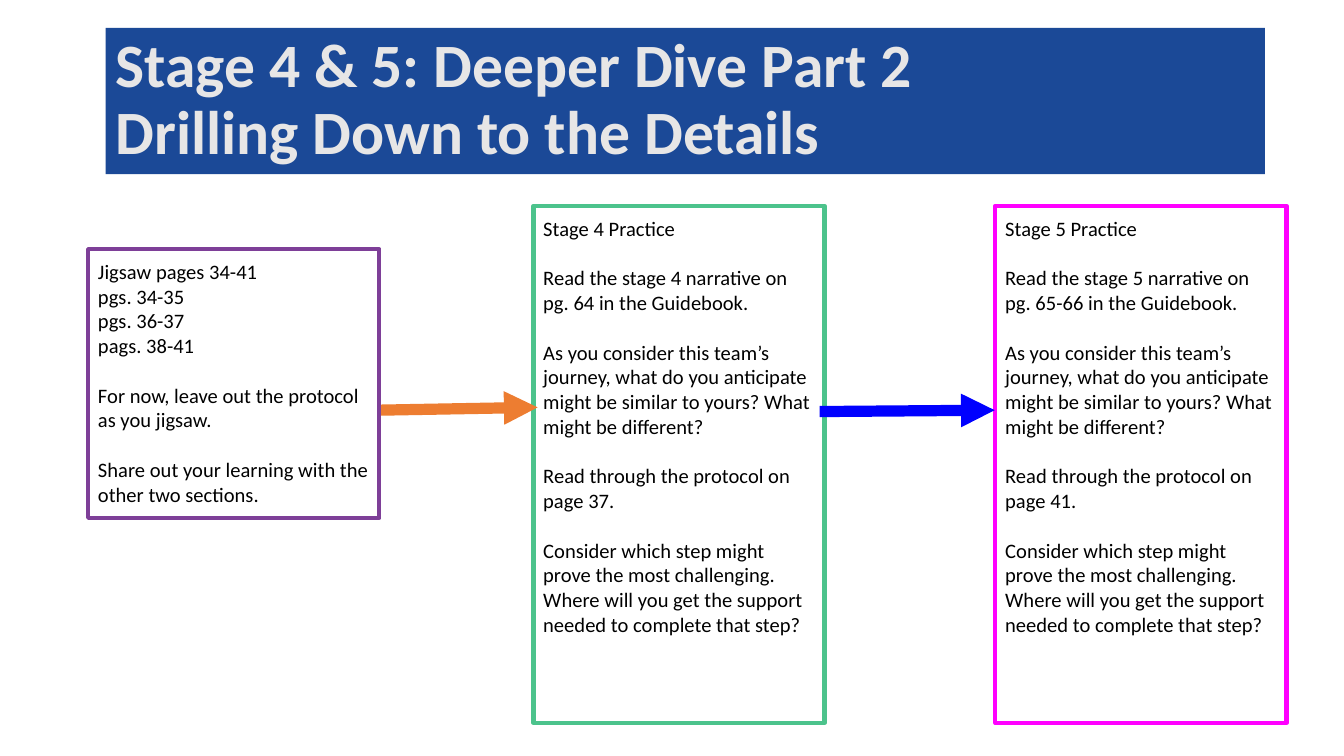
from lxml import etree
from pptx import Presentation
from pptx.dml.color import RGBColor
from pptx.enum.shapes import MSO_CONNECTOR
from pptx.enum.text import MSO_ANCHOR, MSO_AUTO_SIZE, PP_ALIGN
from pptx.oxml.ns import qn
from pptx.util import Pt

PX = 914400 / 192
FONT = "Calibri"
STRAIGHT = MSO_CONNECTOR.STRAIGHT
TOP, MIDDLE = MSO_ANCHOR.TOP, MSO_ANCHOR.MIDDLE
NO_FIT = MSO_AUTO_SIZE.NONE
LEFT = PP_ALIGN.LEFT
BOX_WIDTH = 416
BLOCK_GAP = 13.4

JIGSAW = [
    ["Jigsaw pages 34-41", "pgs. 34-35", "pgs. 36-37", "pags. 38-41"],
    ["For now, leave out the protocol as you jigsaw."],
    ["Share out your learning with the other two sections."],
]


def practice(stage, guide_pages, protocol_page):
    return [
        [f"Stage {stage} Practice"],
        [f"Read the stage {stage} narrative on pg. {guide_pages} in the Guidebook."],
        ["As you consider this team’s journey, what do you anticipate "
         "might be similar to yours? What might be different?"],
        [f"Read through the protocol on page {protocol_page}."],
        ["Consider which step might prove the most challenging.",
         "Where will you get the support needed to complete that step?"],
    ]


def px(n):
    return int(n * PX)


def color(value):
    return RGBColor.from_string(value)


def setup_frame(tf, anchor, margin_x, margin_y):
    tf.word_wrap = True
    tf.auto_size = NO_FIT
    tf.vertical_anchor = anchor
    tf.margin_left = tf.margin_right = px(margin_x)
    tf.margin_top = tf.margin_bottom = px(margin_y)


def add_paragraph(tf, first, text, size, fill, bold=False):
    p = tf.paragraphs[0] if first else tf.add_paragraph()
    p.alignment = LEFT
    r = p.add_run()
    r.text = text
    r.font.name = FONT
    r.font.size = Pt(size)
    r.font.bold = bold
    r.font.color.rgb = color(fill)
    return p


def add_title(s, lines):
    sp = s.shapes.title
    sp.left, sp.top, sp.width, sp.height = px(151), px(40), px(1656), px(209)
    sp.fill.solid()
    sp.fill.fore_color.rgb = color("1B4997")
    setup_frame(sp.text_frame, MIDDLE, 14, 7)
    for i, line in enumerate(lines):
        p = add_paragraph(sp.text_frame, i == 0, line, 33, "E7E6E6", True)
        p.line_spacing = 0.9


def add_box(s, x, y, height, outline, blocks):
    sp = s.shapes.add_textbox(px(x), px(y), px(BOX_WIDTH), px(height))
    sp.line.color.rgb = color(outline)
    sp.line.width = Pt(2.25)
    setup_frame(sp.text_frame, TOP, 14, 14)
    for i, block in enumerate(blocks):
        for j, line in enumerate(block):
            p = add_paragraph(sp.text_frame, i == j == 0, line, 11, "000000")
            if i and j == 0:
                p.space_before = Pt(BLOCK_GAP)


def add_arrow(s, x1, y1, x2, y2, stroke):
    cxn = s.shapes.add_connector(STRAIGHT, px(x1), px(y1), px(x2), px(y2))
    cxn.line.color.rgb = color(stroke)
    cxn.line.width = Pt(6)
    ln = cxn._element.spPr.find(qn("a:ln"))
    etree.SubElement(ln, qn("a:tailEnd"), type="triangle")
    etree.SubElement(cxn._element.spPr, qn("a:effectLst"))


def main():
    prs = Presentation()
    prs.slide_width, prs.slide_height = px(1920), px(1080)
    s = prs.slides.add_slide(prs.slide_layouts[5])
    add_title(s, ["Stage 4 & 5: Deeper Dive Part 2", "Drilling Down to the Details"])
    add_box(s, 762, 294, 739, "4CC38C", practice(4, "64", 37))
    add_box(s, 1422, 294, 739, "FF00FF", practice(5, "65-66", 41))
    add_arrow(s, 541, 586, 768, 582, "ED7D31")
    add_arrow(s, 1171, 588, 1421, 586, "0000FF")
    add_box(s, 126, 356, 384, "7E3F98", JIGSAW)
    prs.save("out.pptx")


if __name__ == "__main__":
    main()
